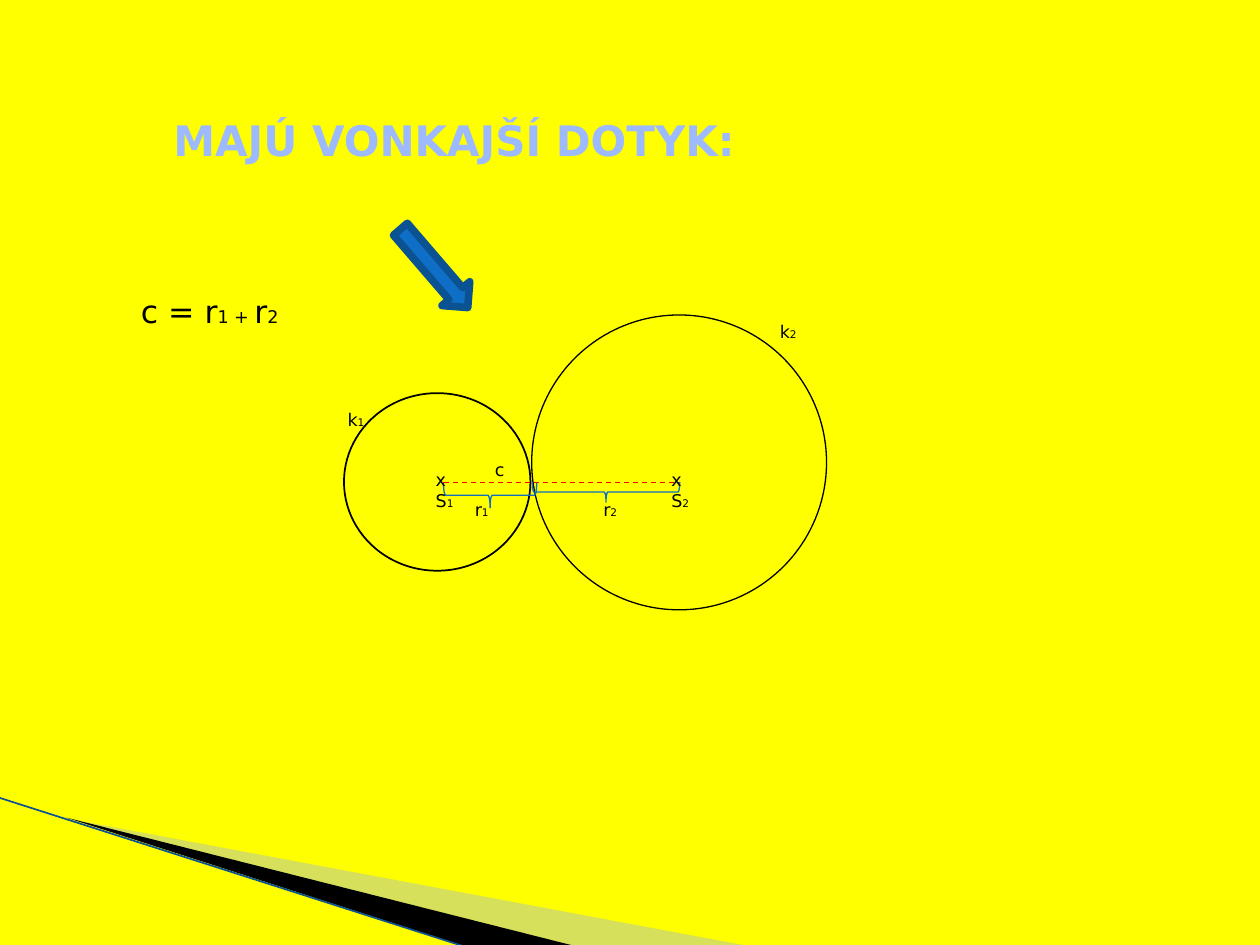
from lxml.etree import SubElement
from pptx import Presentation
from pptx.dml.color import RGBColor
from pptx.enum.dml import MSO_LINE
from pptx.enum.shapes import MSO_CONNECTOR, MSO_SHAPE as Shape
from pptx.enum.text import MSO_AUTO_SIZE, PP_ALIGN
from pptx.oxml.ns import qn
from pptx.util import Inches, Pt

FONT = "DejaVu Sans"
HUES = {
    "page": "FFFF00",
    "ink": "000000",
    "title": "9EBAFF",
    "shade": "9DB2E1",
    "edge": "0B5292",
    "blue": "0F6FC6",
    "red": "FF0000",
}


def hue(name):
    return RGBColor.from_string(HUES[name])


def paint(shape, fill=None, line=None, width=0.75):
    shape.shadow.inherit = False
    if fill:
        shape.fill.solid()
        shape.fill.fore_color.rgb = hue(fill)
    else:
        shape.fill.background()
    if line:
        shape.line.color.rgb = hue(line)
        shape.line.width = Pt(width)
    else:
        shape.line.fill.background()


def add_form(slide, kind, box, turn=0, **style):
    form = slide.shapes.add_shape(kind, *map(Inches, box))
    form.rotation = turn
    paint(form, **style)


def add_wedge(slide, points, fill, alpha=None):
    spots = [(Inches(x), Inches(y)) for x, y in points]
    pen = slide.shapes.build_freeform(*spots[0], scale=1.0)
    pen.add_line_segments(spots[1:], close=True)
    wedge = pen.convert_to_shape()
    paint(wedge, fill=fill)
    if alpha:
        tint = wedge.fill._xPr.find(qn("a:solidFill"))[0]
        SubElement(tint, qn("a:alpha")).set("val", str(alpha * 1000))


def add_line(slide, start, end, color, width, dash=None):
    ends = map(Inches, (*start, *end))
    line = slide.shapes.add_connector(MSO_CONNECTOR.STRAIGHT, *ends)
    line.line.color.rgb = hue(color)
    line.line.width = Pt(width)
    if dash:
        line.line.dash_style = dash
    SubElement(line._element.spPr, qn("a:effectLst"))


def add_text(slide, box, rows, size=10, low=6, color="ink", bold=False,
             align=PP_ALIGN.LEFT, wrap=True):
    frame = slide.shapes.add_textbox(*map(Inches, box)).text_frame
    frame.word_wrap = wrap
    frame.auto_size = MSO_AUTO_SIZE.SHAPE_TO_FIT_TEXT
    for i, row in enumerate(rows):
        para = frame.add_paragraph() if i else frame.paragraphs[0]
        para.alignment = align
        for j, part in enumerate(row):
            run = para.add_run()
            run.text = part
            run.font.name = FONT
            run.font.size = Pt(low if j % 2 else size)
            run.font.bold = bold
            run.font.color.rgb = hue(color)


def add_decor(slide):
    add_wedge(slide, [(0.55, 6.5), (5.95, 7.51), (4.56, 7.51)], "shade", 40)
    add_wedge(slide, [(0.53, 6.49), (4.57, 7.51), (3.72, 7.52)], "ink")
    add_line(slide, (-0.01, 6.33), (3.71, 7.52), "edge", 0.95)


def add_circles(slide):
    disc = Shape.FLOWCHART_CONNECTOR
    add_form(slide, disc, (2.73, 3.12, 1.48, 1.41), line="ink", width=1)
    add_form(slide, disc, (4.22, 2.5, 2.34, 2.34), line="ink")
    add_form(slide, Shape.DOWN_ARROW, (3.3, 1.72, 0.29, 0.82), 319.3,
             fill="blue", line="edge", width=4.33)
    add_line(slide, (3.52, 3.83), (5.39, 3.83), "red", 0.75, MSO_LINE.DASH)
    for box in ((4.73, 3.32, 0.16, 1.17), (3.79, 3.56, 0.2, 0.74)):
        add_form(slide, Shape.LEFT_BRACE, box, 270, line="blue")


def add_labels(slide):
    labels = [
        ((3.36, 3.67, 0.47, 0.44), [["x"], ["S", "1"]]),
        ((5.23, 3.67, 0.62, 0.44), [["x"], ["S", "2"]]),
        ((3.83, 3.59, 0.39, 0.27), [["c"]]),
        ((3.67, 3.91, 0.55, 0.27), [["r", "1"]]),
        ((4.69, 3.91, 0.47, 0.27), [["r", "2"]]),
        ((6.09, 2.5, 0.55, 0.27), [["k", "2"]]),
        ((2.66, 3.2, 1.02, 0.27), [["k", "1"]]),
    ]
    for box, rows in labels:
        add_text(slide, box, rows)


def main():
    deck = Presentation()
    deck.slide_width, deck.slide_height = Inches(10), Inches(7.5)
    slide = deck.slides.add_slide(deck.slide_layouts[6])
    slide.background.fill.solid()
    slide.background.fill.fore_color.rgb = hue("page")
    add_decor(slide)
    add_circles(slide)
    add_labels(slide)
    add_text(slide, (1.17, 0.86, 4.87, 0.5), [["MAJÚ VONKAJŠÍ DOTYK:"]],
             size=24, color="title", bold=True, align=PP_ALIGN.CENTER,
             wrap=False)
    add_text(slide, (1.02, 2.27, 1.72, 0.4), [["c = r", "1 + ", "r", "2"]],
             size=18, low=10)
    deck.save("out.pptx")


if __name__ == "__main__":
    main()
